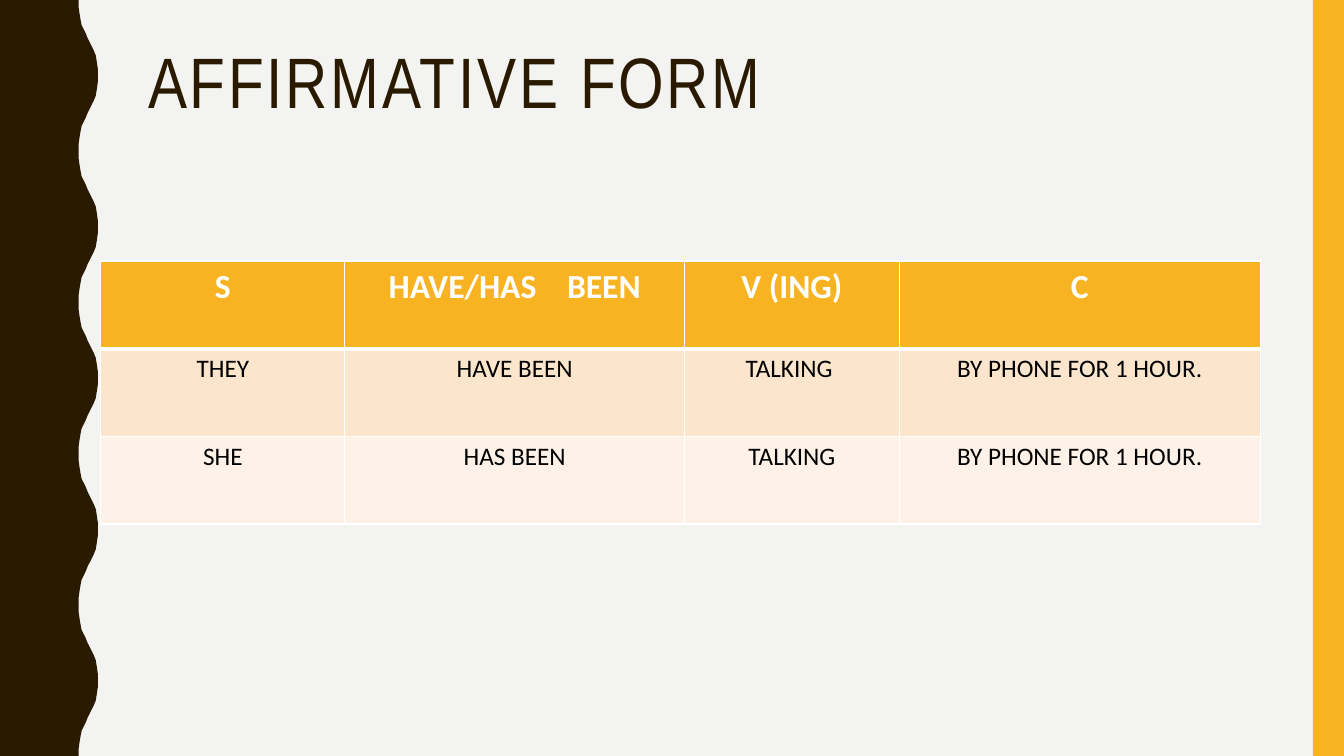
from lxml import etree
from pptx import Presentation
from pptx.dml.color import RGBColor
from pptx.enum.shapes import MSO_SHAPE
from pptx.enum.text import MSO_ANCHOR, PP_ALIGN
from pptx.oxml.ns import qn
from pptx.util import Inches, Pt

RECTANGLE = MSO_SHAPE.RECTANGLE
CENTER = PP_ALIGN.CENTER
TOP = MSO_ANCHOR.TOP

COLORS = {
    "background": "F3F3F2",
    "brown": "2A1A00",
    "amber": "F8B323",
    "peach": "FCE5CD",
    "cream": "FEF2E8",
    "white": "FFFFFF",
    "black": "000000",
}
TITLE_FONT = "Arial Narrow"
TABLE_FONT = "Calibri"

SLIDE_WIDTH, SLIDE_HEIGHT = 13.33, 7.5
WAVE_PERIOD = 1.5
# One rising half of the wave: (x, y) from trough to crest
WAVE_RISE = [
    (0.78, 0), (0.78, 0.07), (0.79, 0.14), (0.8, 0.2), (0.81, 0.25),
    (0.83, 0.29), (0.85, 0.33), (0.87, 0.38), (0.89, 0.42), (0.91, 0.46),
    (0.93, 0.5), (0.95, 0.55), (0.96, 0.61), (0.97, 0.68), (0.97, 0.75),
]

COLUMN_WIDTHS = [2.42, 3.37, 2.13, 3.58]
ROW_HEIGHT = 0.87
ROWS = [
    ["S", "HAVE/HAS BEEN", "V (ING)", "C"],
    ["THEY", "HAVE BEEN", "TALKING ", "BY PHONE FOR 1 HOUR."],
    ["SHE", "HAS BEEN", "TALKING", "BY PHONE FOR 1 HOUR."],
]
# Fill, text colour, size, bold, top and bottom border widths
ROW_STYLES = [
    ("amber", "white", 24, True, 1, 3),
    ("peach", "black", 18, False, 3, 1),
    ("cream", "black", 18, False, 1, 1),
]


def rgb(name):
    return RGBColor.from_string(COLORS[name])


def set_spacing(run, points):
    run.font._element.set("spc", str(round(points * 100)))


class SlideBuilder:
    def __init__(self, presentation):
        self.slide = presentation.slides.add_slide(presentation.slide_layouts[6])
        self.shapes = self.slide.shapes
        background = self.slide.background.fill
        background.solid()
        background.fore_color.rgb = rgb("background")

    def paint(self, shape, color):
        shape.shadow.inherit = False
        shape.fill.solid()
        shape.fill.fore_color.rgb = rgb(color)
        shape.line.fill.background()

    def band(self, left, width, color):
        shape = self.shapes.add_shape(
            RECTANGLE, Inches(left), 0, Inches(width), Inches(SLIDE_HEIGHT))
        self.paint(shape, color)

    def wave(self, color):
        rise_and_fall = WAVE_RISE + [
            (x, WAVE_PERIOD - y) for x, y in reversed(WAVE_RISE[1:-1])]
        edge = [(x, y + period * WAVE_PERIOD)
                for period in range(round(SLIDE_HEIGHT / WAVE_PERIOD))
                for x, y in rise_and_fall]
        edge += [(WAVE_RISE[0][0], SLIDE_HEIGHT), (0, SLIDE_HEIGHT)]
        builder = self.shapes.build_freeform(0, 0)
        builder.add_line_segments(
            [(Inches(x), Inches(y)) for x, y in edge], close=True)
        self.paint(builder.convert_to_shape(), color)

    def title(self, text, left, top, width, height):
        box = self.shapes.add_textbox(
            Inches(left), Inches(top), Inches(width), Inches(height))
        frame = box.text_frame
        frame.word_wrap = True
        frame.vertical_anchor = TOP
        paragraph = frame.paragraphs[0]
        paragraph.line_spacing = 0.9
        paragraph.font.name = TITLE_FONT
        paragraph.font.size = Pt(51)
        paragraph.font.color.rgb = rgb("brown")
        run = paragraph.add_run()
        run.text = text
        set_spacing(run, 2)

    def table(self, left, top):
        frame = self.shapes.add_table(
            len(ROWS), len(COLUMN_WIDTHS), Inches(left), Inches(top),
            Inches(sum(COLUMN_WIDTHS)), Inches(ROW_HEIGHT * len(ROWS)))
        table = frame.table
        table.horz_banding = False
        for column, width in zip(table.columns, COLUMN_WIDTHS):
            column.width = Inches(width)
        for row, texts, style in zip(table.rows, ROWS, ROW_STYLES):
            row.height = Inches(ROW_HEIGHT)
            for cell, text in zip(row.cells, texts):
                self.cell(cell, text, *style)
        # Widen the one space in the auxiliary heading
        paragraph = table.cell(0, 1).text_frame.paragraphs[0]
        first, last = paragraph.runs[0].text.split()
        paragraph.runs[0].text = first
        gap, ending = paragraph.add_run(), paragraph.add_run()
        gap.text, ending.text = " ", last
        set_spacing(gap, 16.3)

    def cell(self, cell, text, fill, color, size, bold, top, bottom):
        cell.fill.solid()
        cell.fill.fore_color.rgb = rgb(fill)
        paragraph = cell.text_frame.paragraphs[0]
        paragraph.alignment = CENTER
        paragraph.font.name = TABLE_FONT
        paragraph.font.size = Pt(size)
        paragraph.font.bold = bold
        paragraph.font.color.rgb = rgb(color)
        paragraph.add_run().text = text
        self.borders(cell, {"lnL": 1, "lnR": 1, "lnT": top, "lnB": bottom})

    def borders(self, cell, widths):
        properties = cell._tc.get_or_add_tcPr()
        for index, (side, width) in enumerate(widths.items()):
            line = etree.Element(qn(f"a:{side}"), w=str(Pt(width)))
            fill = etree.SubElement(line, qn("a:solidFill"))
            etree.SubElement(fill, qn("a:srgbClr"), val=COLORS["white"])
            properties.insert(index, line)


def main():
    presentation = Presentation()
    presentation.slide_width = Inches(SLIDE_WIDTH)
    presentation.slide_height = Inches(SLIDE_HEIGHT)
    builder = SlideBuilder(presentation)

    # Side decorations
    builder.wave("brown")
    builder.band(13.02, 0.31, "amber")

    # Heading and grammar table
    builder.title("AFFIRMATIVE FORM", 1.37, 0.42, 11.13, 1.63)
    builder.table(1, 2.59)

    presentation.save("out.pptx")


if __name__ == "__main__":
    main()
